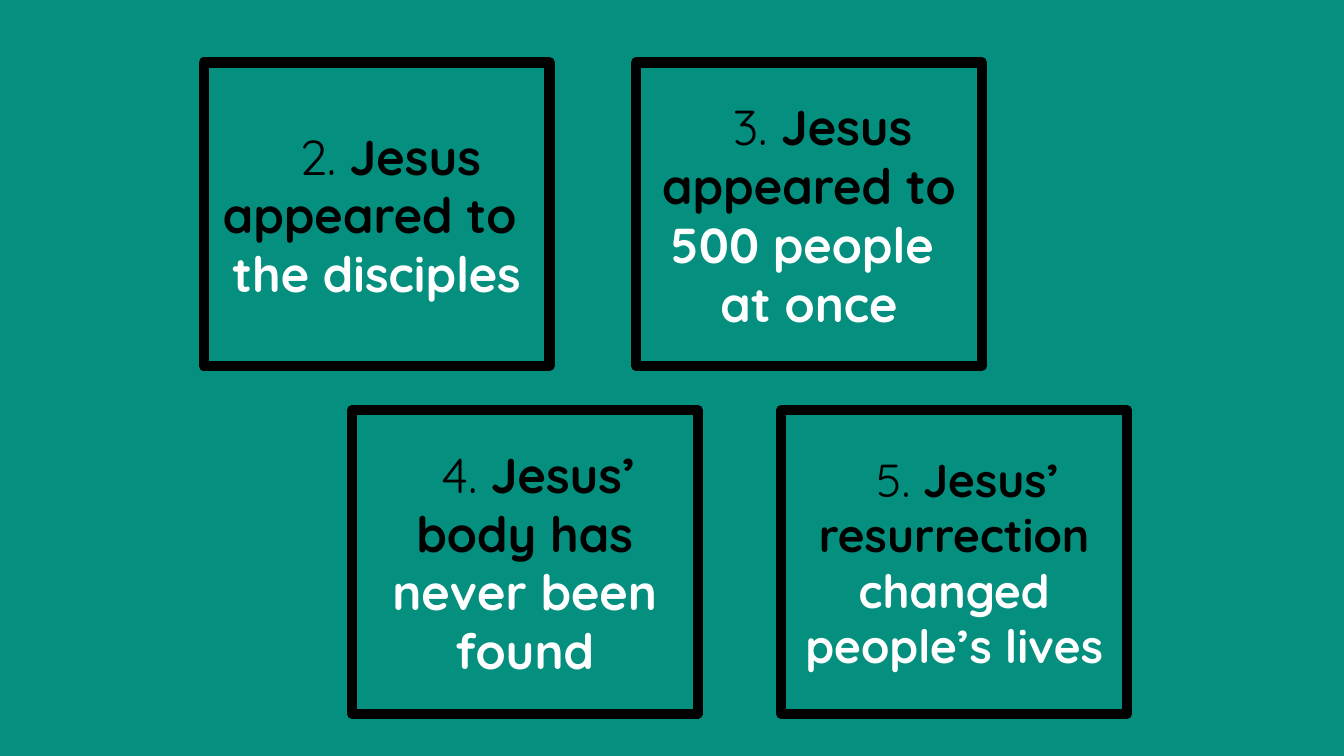
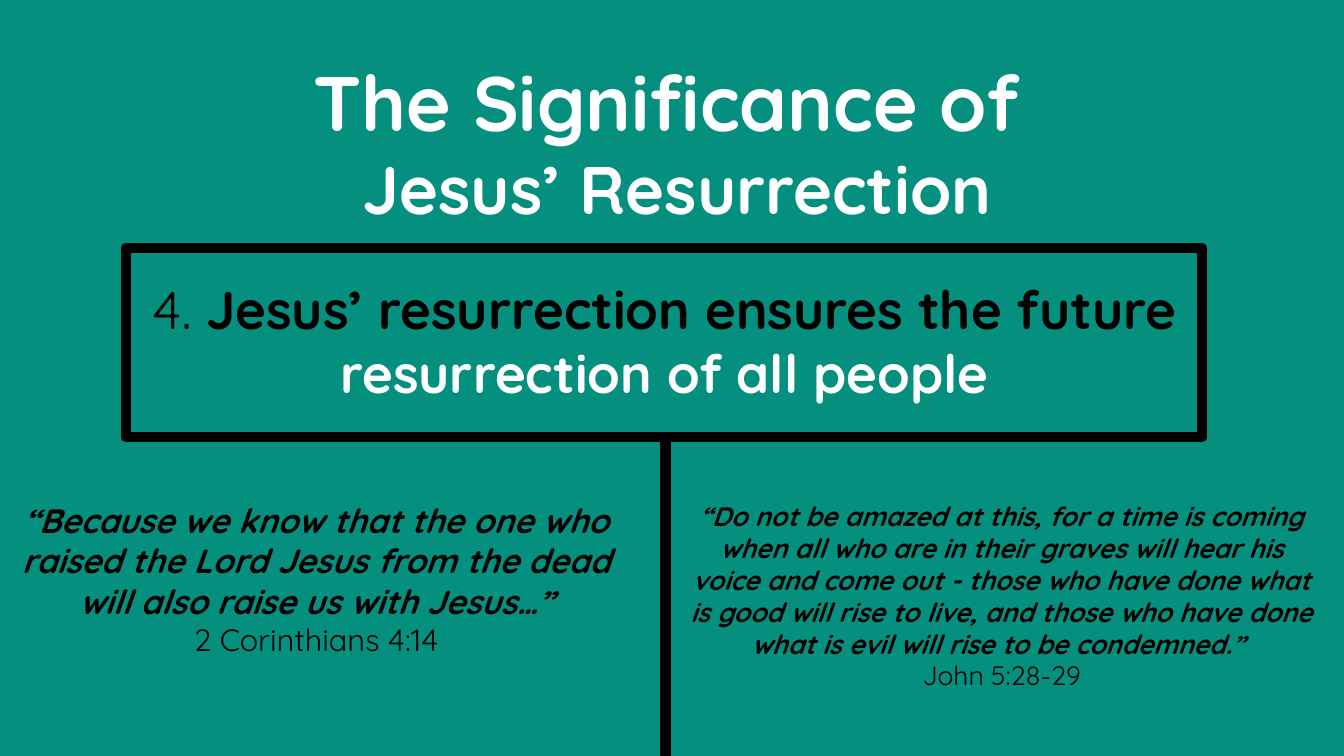
from pptx import Presentation
from pptx import util as u
from pptx.dml.color import RGBColor
from pptx.enum import shapes, text
from pptx.oxml.ns import qn

TEAL = RGBColor(0x04, 0x8F, 0x7E)
BLACK = RGBColor(0, 0, 0)
WHITE = RGBColor(255, 255, 255)
FONT = "Quicksand"
TITLE_ONLY, BLANK = 5, 6


def plain(words, size, color=BLACK):
    return words, size, color, False, False


def bold(words, size, color=BLACK):
    return words, size, color, True, False


def quote(words, size):
    return words, size, BLACK, True, True


class Pages:
    """Holds the deck, its style and the current page."""

    def __init__(self):
        self.deck = Presentation()
        self.deck.slide_width = u.Inches(13.33)
        self.deck.slide_height = u.Inches(7.5)

    def new_page(self, layout):
        self.page = self.deck.slides.add_slide(self.deck.slide_layouts[layout])
        fill = self.page.background.fill
        fill.solid()
        fill.fore_color.rgb = TEAL

    def fill_text(self, frame, paras, anchor=text.MSO_ANCHOR.TOP, first_indent=0):
        frame.word_wrap = True
        frame.auto_size = text.MSO_AUTO_SIZE.NONE
        frame.vertical_anchor = anchor
        frame.margin_left = frame.margin_right = u.Inches(0.1)
        frame.margin_top = frame.margin_bottom = u.Inches(0.05)
        for index, spans in enumerate(paras):
            para = frame.add_paragraph() if index else frame.paragraphs[0]
            para.alignment = text.PP_ALIGN.CENTER
            para.line_spacing = 1.0
            para.space_before = u.Pt(0)
            if first_indent and not index:
                para._p.get_or_add_pPr().set("indent", str(u.Inches(first_indent)))
            for words, size, color, is_bold, is_italic in spans:
                span = para.add_run()
                span.text = words
                font = span.font
                font.name, font.size = FONT, u.Pt(size)
                font.bold, font.italic = is_bold, is_italic
                font.color.rgb = color

    def title(self, left, top, width, height, paras):
        box = self.page.shapes.title
        box.left, box.top = u.Inches(left), u.Inches(top)
        box.width, box.height = u.Inches(width), u.Inches(height)
        self.fill_text(box.text_frame, paras)

    def text_box(self, left, top, width, height, paras):
        box = self.page.shapes.add_textbox(
            u.Inches(left), u.Inches(top), u.Inches(width), u.Inches(height))
        self.fill_text(box.text_frame, paras)

    def frame(self, left, top, width, height, paras=()):
        box = self.page.shapes.add_shape(
            shapes.MSO_SHAPE.RECTANGLE,
            u.Inches(left), u.Inches(top), u.Inches(width), u.Inches(height))
        box.shadow.inherit = False
        box.fill.background()
        box.line.color.rgb = BLACK
        box.line.width = u.Pt(7.25)
        self.fill_text(box.text_frame, paras, text.MSO_ANCHOR.MIDDLE, first_indent=0.27)

    def divider(self, x, top, bottom):
        line = self.page.shapes.add_connector(
            shapes.MSO_CONNECTOR.STRAIGHT,
            u.Inches(x), u.Inches(top), u.Inches(x), u.Inches(bottom))
        line.line.color.rgb = BLACK
        line.line.width = u.Pt(8.25)
        properties = line._element.spPr
        properties.append(properties.makeelement(qn("a:effectLst"), {}))


def evidence_page(pages):
    pages.new_page(BLANK)
    upper, lower = 0.62, 4.07
    cards = [
        (2.02, upper, [
            [plain("2. ", 35), bold("Jesus appeared to ", 35)],
            [bold("the disciples", 35, WHITE)]]),
        (3.49, lower, [
            [plain("4. ", 35), bold("Jesus’ body has ", 35),
             bold("never been found", 35, WHITE)]]),
        (6.31, upper, [
            [plain("3. ", 35), bold("Jesus appeared to ", 35),
             bold("500 people ", 35, WHITE)],
            [bold("at once", 35, WHITE)]]),
        (7.75, lower, [
            [plain("5. ", 33), bold("Jesus’ resurrection ", 33),
             bold("changed people’s lives", 33, WHITE)]]),
    ]
    for left, top, paras in cards:
        pages.frame(left, top, 3.43, 3.01, paras)


def significance_page(pages):
    pages.new_page(TITLE_ONLY)
    pages.title(0.39, 0.49, 12.65, 1.83, [
        [bold("The Significance of ", 55, WHITE)],
        [bold("Jesus’ Resurrection", 48, WHITE)]])

    # Framed statement
    pages.frame(1.25, 2.46, 10.67, 1.88)
    pages.text_box(0.52, 2.69, 12.14, 1.38, [
        [plain("4. ", 38), bold("Jesus’ resurrection ensures the future ", 38),
         bold("resurrection of all people", 38, WHITE)]])

    # Verses on both sides of the divider
    pages.text_box(0.08, 4.91, 6.11, 1.68, [
        [quote("“Because we know that the one who raised the Lord Jesus "
               "from the dead will also raise us with Jesus…”", 24)],
        [plain("2 Corinthians 4:14", 22)]])
    pages.text_box(6.72, 4.91, 6.43, 2.02, [
        [quote("“Do not be amazed at this, for a time is coming when all who "
               "are in their graves will hear his voice and come out - those "
               "who have done what is good will rise to live, and those who "
               "have done what is evil will rise to be condemned.” ", 19)],
        [plain("John 5:28-29", 19)]])
    pages.divider(6.6, 4.34, 7.5)


def main():
    pages = Pages()
    evidence_page(pages)
    significance_page(pages)
    pages.deck.save("out.pptx")


if __name__ == "__main__":
    main()
